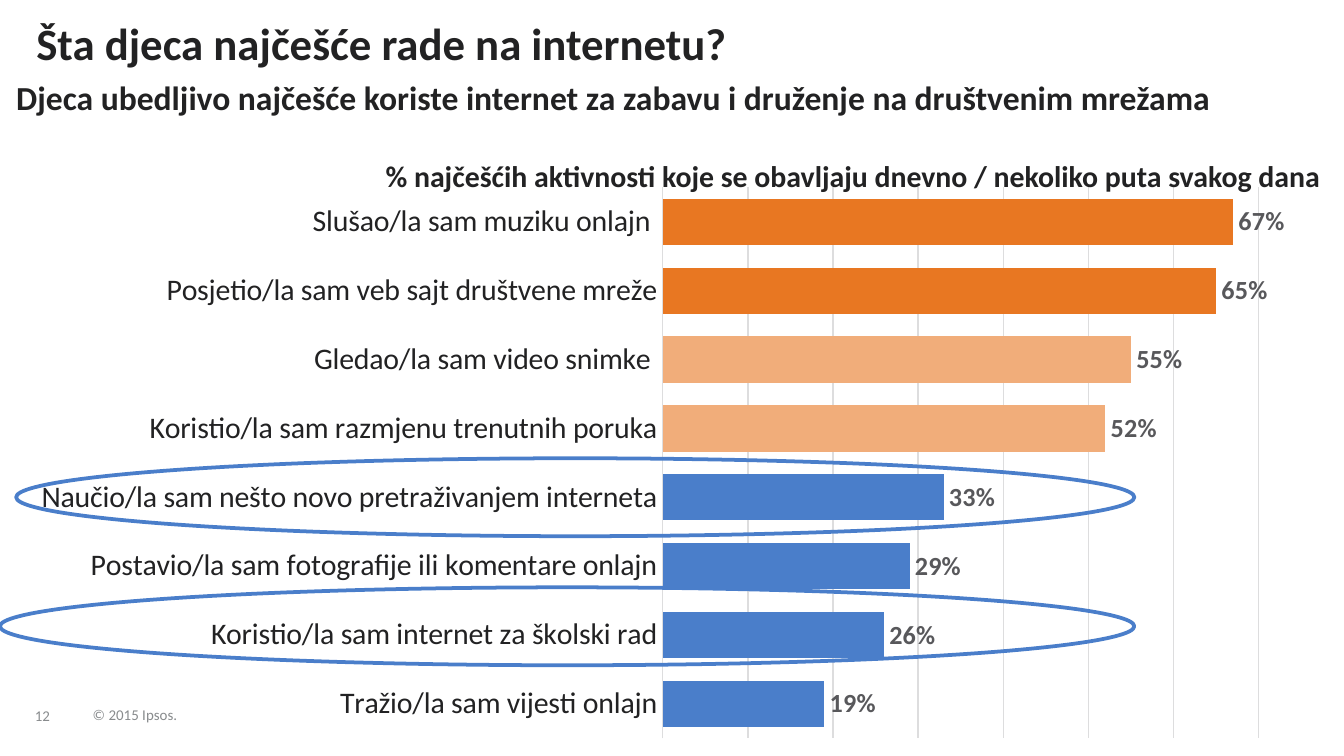
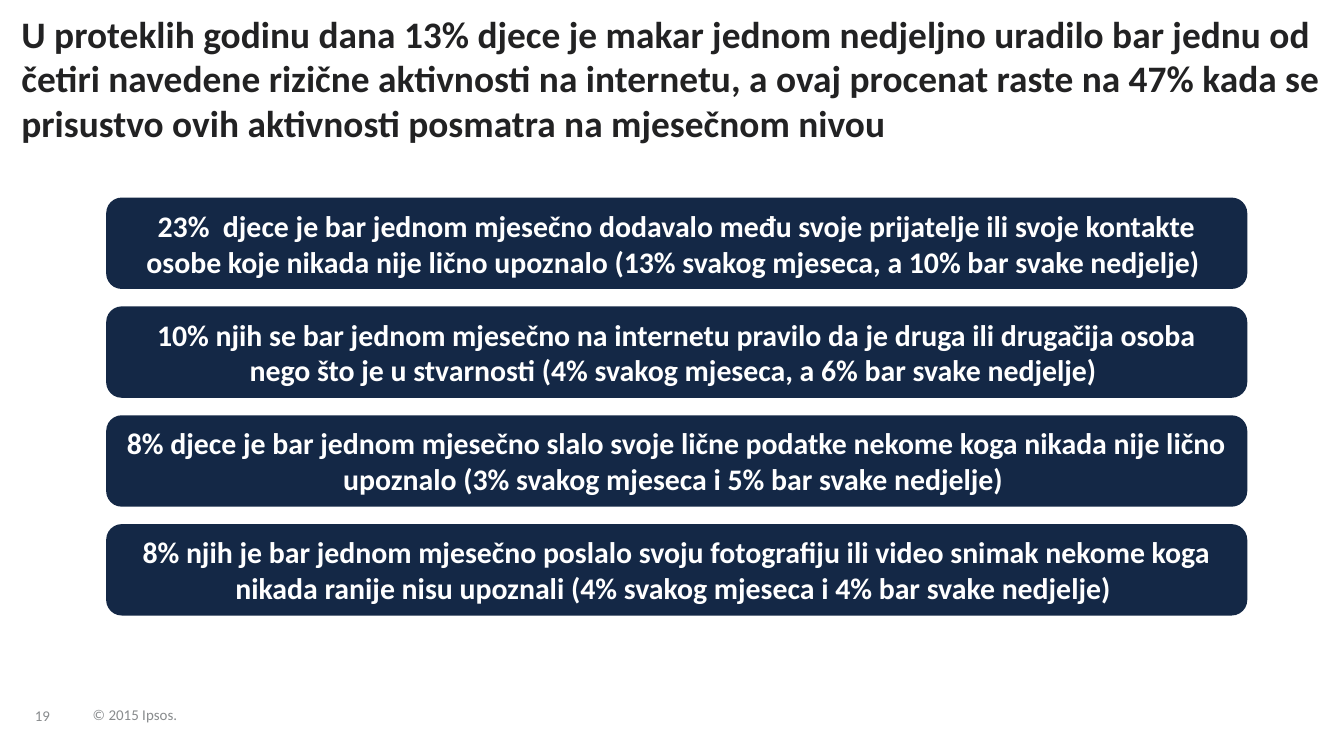
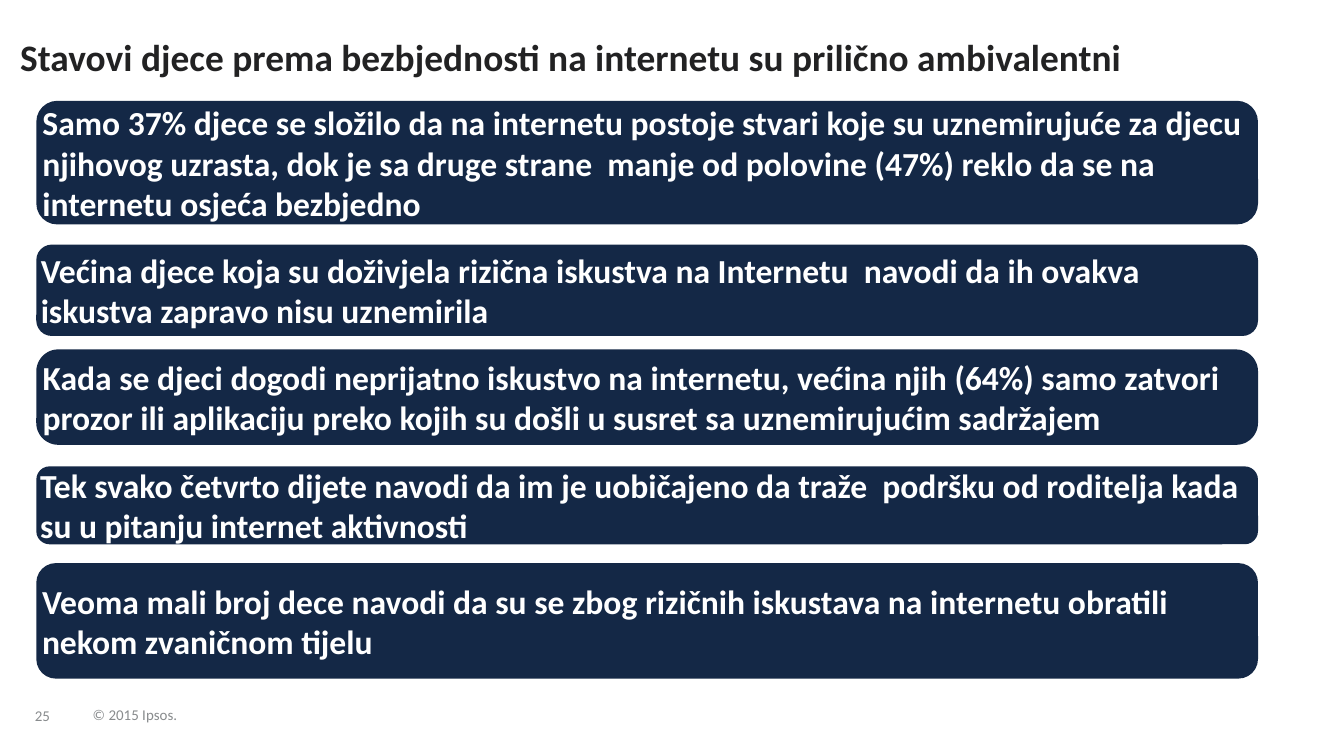
from lxml import etree
from pptx import Presentation
from pptx import util as u
from pptx.chart import data
from pptx.dml.color import RGBColor
from pptx.enum import chart as kinds, shapes, text

FONT = "Calibri"
HUES = {
    "ink": "222223",
    "gray": "888B8D",
    "label": "58585B",
    "grid": "DDDDDE",
    "navy": "142846",
    "blue": "4A7ECA",
    "peach": "F1AD7A",
    "orange": "E87722",
    "white": "FFFFFF",
}
ACTS = [
    ("Tražio/la sam vijesti onlajn", 19, "blue"),
    ("Koristio/la sam internet za školski rad", 26, "blue"),
    ("Postavio/la sam fotografije ili komentare onlajn", 29, "blue"),
    ("Naučio/la sam nešto novo pretraživanjem interneta", 33, "blue"),
    ("Koristio/la sam razmjenu trenutnih poruka", 52, "peach"),
    ("Gledao/la sam video snimke ", 55, "peach"),
    ("Posjetio/la sam veb sajt društvene mreže", 65, "orange"),
    ("Slušao/la sam muziku onlajn ", 67, "orange"),
]
RISKS = [
    "23%  djece je bar jednom mjesečno dodavalo među svoje prijatelje ili svoje kontakte osobe koje nikada nije lično upoznalo (13% svakog mjeseca, a 10% bar svake nedjelje) ",
    "10% njih se bar jednom mjesečno na internetu pravilo da je druga ili drugačija osoba nego što je u stvarnosti (4% svakog mjeseca, a 6% bar svake nedjelje) ",
    "8% djece je bar jednom mjesečno slalo svoje lične podatke nekome koga nikada nije lično upoznalo (3% svakog mjeseca i 5% bar svake nedjelje) ",
    "8% njih je bar jednom mjesečno poslalo svoju fotografiju ili video snimak nekome koga nikada ranije nisu upoznali (4% svakog mjeseca i 4% bar svake nedjelje) ",
]
VIEWS = [
    (0.75, 0.92, 0.17, "Samo 37% djece se složilo da na internetu postoje stvari koje su uznemirujuće za djecu njihovog uzrasta, dok je sa druge strane  manje od polovine (47%) reklo da se na internetu osjeća bezbjedno"),
    (1.82, 0.68, 0.17, "Većina djece koja su doživjela rizična iskustva na Internetu  navodi da ih ovakva iskustva zapravo nisu uznemirila"),
    (2.6, 0.71, 0.23, "Kada se djeci dogodi neprijatno iskustvo na internetu, većina njih (64%) samo zatvori prozor ili aplikaciju preko kojih su došli u susret sa uznemirujućim sadržajem"),
    (3.47, 0.58, 0.17, "Tek svako četvrto dijete navodi da im je uobičajeno da traže  podršku od roditelja kada su u pitanju internet aktivnosti"),
    (4.19, 0.86, 0.17, "Veoma mali broj dece navodi da su se zbog rizičnih iskustava na internetu obratili nekom zvaničnom tijelu"),
]


def hue(name):
    return RGBColor.from_string(HUES[name])


def place(box):
    return [u.Inches(n) for n in box]


def style(font, size, color, bold=False):
    font.name = FONT
    font.size = u.Pt(size)
    font.bold = bold
    font.color.rgb = hue(color)


def paint(line, color, width):
    line.color.rgb = hue(color)
    line.width = u.Pt(width)


def bare(frame):
    frame.margin_left = frame.margin_right = 0
    frame.margin_top = frame.margin_bottom = 0


def write(slide, box, words, size, color="ink", bold=True, wrap=True, low=False):
    frame = slide.shapes.add_textbox(*place(box)).text_frame
    bare(frame)
    frame.word_wrap = wrap
    frame.vertical_anchor = text.MSO_ANCHOR.BOTTOM if low else text.MSO_ANCHOR.TOP
    para = frame.paragraphs[0]
    para.text = words
    style(para.font, size, color, bold)
    return para


def foot(slide, page):
    for box, words in (
        ((0.26, 5.13, 0.34, 0.26), page),
        ((0.69, 5.2, 0.76, 0.18), "© 2015 Ipsos."),
    ):
        para = write(slide, box, words, 8, "gray", False, False, True)
        para.line_spacing = 0.85


def card(slide, box, words, size, bend=0.17, mid=False):
    form = slide.shapes.add_shape(shapes.MSO_SHAPE.ROUNDED_RECTANGLE, *place(box))
    form.shadow.inherit = False
    form.adjustments[0] = bend
    form.fill.solid()
    form.fill.fore_color.rgb = hue("navy")
    form.line.fill.background()
    frame = form.text_frame
    frame.word_wrap = True
    frame.vertical_anchor = text.MSO_ANCHOR.MIDDLE
    if not mid:
        bare(frame)
    para = frame.paragraphs[0]
    para.text = words
    para.alignment = text.PP_ALIGN.CENTER if mid else text.PP_ALIGN.LEFT
    style(para.font, size, "white", True)


def ring(slide, box):
    form = slide.shapes.add_shape(shapes.MSO_SHAPE.OVAL, *place(box))
    form.shadow.inherit = False
    form.fill.background()
    paint(form.line, "blue", 2)


def frame_plot(chart, **sides):
    area = chart.element.chart.plotArea
    for old in area.findall("{*}layout"):
        area.remove(old)
    space = "{%s}" % area.nsmap["c"]
    outer = etree.Element(space + "layout")
    inner = etree.SubElement(outer, space + "manualLayout")
    modes = {"layoutTarget": "inner", "xMode": "edge", "yMode": "edge"}
    for tag, value in {**modes, **sides}.items():
        etree.SubElement(inner, space + tag, val=str(value))
    area.insert(0, outer)


def bars(slide, box):
    table = data.CategoryChartData()
    table.categories = [name for name, _, _ in ACTS]
    table.add_series("Series 1", [value for _, value, _ in ACTS])
    chart = slide.shapes.add_chart(
        kinds.XL_CHART_TYPE.BAR_CLUSTERED, *place(box), table
    ).chart
    chart.has_legend = chart.has_title = False
    style(chart.font, 10, "ink")
    frame_plot(chart, x=0.51, y=0.02, w=0.47, h=0.96)

    names = chart.category_axis
    names.major_tick_mark = kinds.XL_TICK_MARK.NONE
    style(names.tick_labels.font, 16, "ink")
    paint(names.format.line, "grid", 0.75)

    scale = chart.value_axis
    scale.visible = False
    scale.minimum_scale, scale.maximum_scale, scale.major_unit = 0, 70, 10
    scale.has_major_gridlines = True
    paint(scale.major_gridlines.format.line, "grid", 0.75)

    plot = chart.plots[0]
    plot.gap_width = 49
    plot.vary_by_categories = False
    series = plot.series[0]
    series.format.fill.solid()
    series.format.fill.fore_color.rgb = hue("blue")
    for spot, (_, _, color) in enumerate(ACTS):
        if color != "blue":
            fill = series.points[spot].format.fill
            fill.solid()
            fill.fore_color.rgb = hue(color)
    tags = series.data_labels
    tags.show_value = True
    tags.number_format = "0\\%"
    tags.number_format_is_linked = False
    tags.position = kinds.XL_LABEL_POSITION.OUTSIDE_END
    style(tags.font, 14, "label", True)


def main():
    deck = Presentation()
    deck.slide_width = u.Inches(10)
    deck.slide_height = deck.slide_width * 9 // 16
    habits, risks, views = [
        deck.slides.add_slide(deck.slide_layouts[6]) for _ in range(3)
    ]

    foot(habits, "12")
    write(habits, (0.27, 0.12, 5.19, 0.4), "Šta djeca najčešće rade na internetu?", 24, wrap=False)
    bars(habits, (0.12, 1.31, 9.44, 4.27))
    write(habits, (2.87, 1.17, 7.73, 0.27), "% najčešćih aktivnosti koje se obavljaju dnevno / nekoliko puta svakog dana", 16)
    ring(habits, (0.12, 3.41, 8.32, 0.58))
    ring(habits, (0, 4.37, 8.44, 0.58))
    write(habits, (0.12, 0.57, 9.58, 0.3), "Djeca ubedljivo najčešće koriste internet za zabavu i druženje na društvenim mrežama", 18)

    foot(risks, "19")
    write(risks, (0.16, 0, 9.84, 1.08), "U proteklih godinu dana 13% djece je makar jednom nedjeljno uradilo bar jednu od četiri navedene rizične aktivnosti na internetu, a ovaj procenat raste na 47% kada se prisustvo ovih aktivnosti posmatra na mjesečnom nivou", 20, low=True)
    for row, words in enumerate(RISKS):
        card(risks, (0.79, 1.47 + row * 0.81, 8.49, 0.68), words, 16, mid=True)

    foot(views, "25")
    write(views, (0.15, 0.19, 9.42, 0.4), "Stavovi djece prema bezbjednosti na internetu su prilično ambivalentni", 20, low=True)
    for top, tall, bend, words in VIEWS:
        card(views, (0.27, top, 9.09, tall), words, 18, bend)

    deck.save("out.pptx")


if __name__ == "__main__":
    main()
